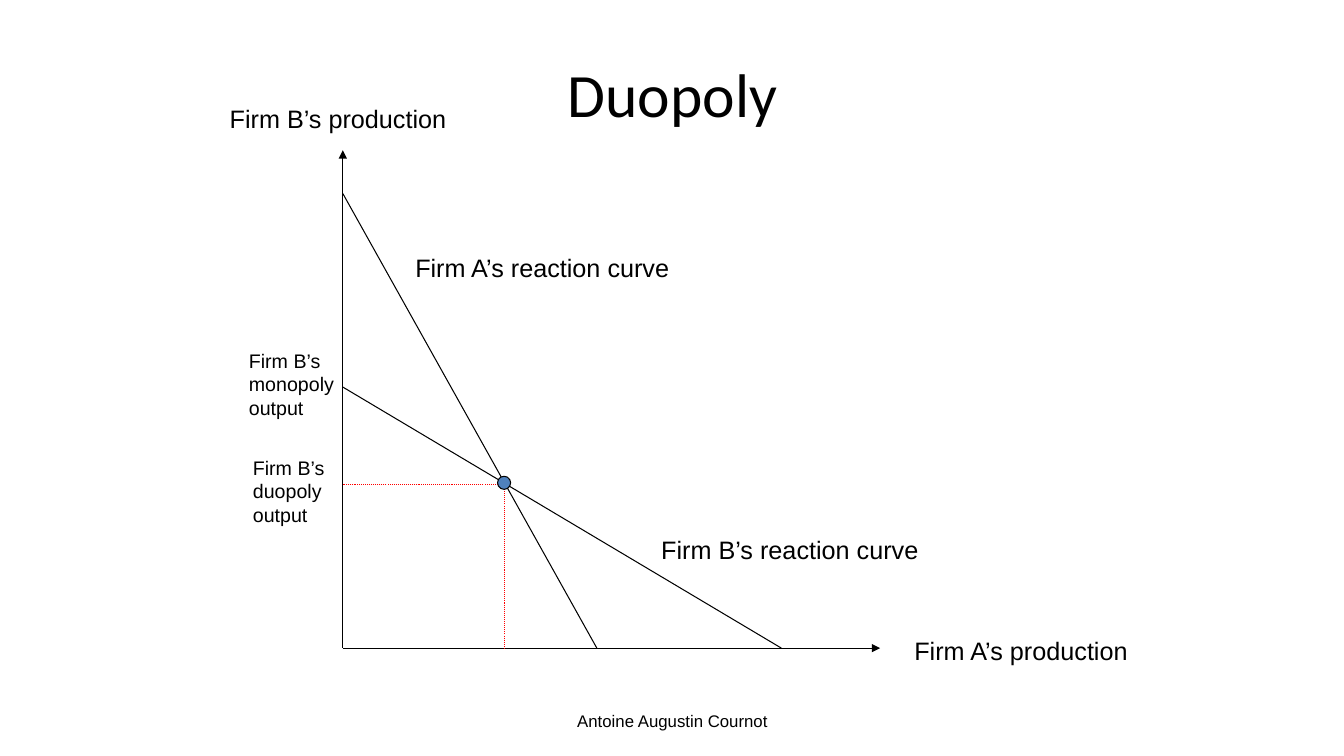
"""Build a slide showing the reaction curves of a Cournot duopoly."""
from dataclasses import dataclass

from lxml.etree import SubElement
from pptx import Presentation
from pptx.dml.color import RGBColor
from pptx.enum.dml import MSO_LINE_DASH_STYLE as Dash
from pptx.enum.shapes import MSO_CONNECTOR as Connector, MSO_SHAPE as Shape
from pptx.enum.text import MSO_ANCHOR as Anchor, PP_ALIGN as Align
from pptx.oxml.ns import qn
from pptx.slide import Slide
from pptx.util import Inches, Pt

BLACK = RGBColor(0x00, 0x00, 0x00)
RED = RGBColor(0xFF, 0x00, 0x00)
BLUE = RGBColor(0x4F, 0x81, 0xBD)
LINE_WIDTH = Pt(0.75)
ORIGIN_X, ORIGIN_Y = 3.4, 6.43
DUOPOLY_X, DUOPOLY_Y = 5.0, 4.79
MARKER_SIZE = 0.13


@dataclass(frozen=True)
class Label:
    text: str
    left: float
    top: float
    width: float
    height: float = 0.4
    size: int = 18
    font: str = "Arial"
    align: Align = Align.LEFT
    anchor: Anchor = Anchor.TOP


@dataclass(frozen=True)
class Segment:
    start: tuple[float, float]
    end: tuple[float, float]
    color: RGBColor = BLACK
    arrow: bool = False
    dotted: bool = False


SEGMENTS = [
    Segment((ORIGIN_X, ORIGIN_Y), (8.73, ORIGIN_Y), arrow=True),
    Segment((ORIGIN_X, ORIGIN_Y), (ORIGIN_X, 1.49), arrow=True),
    Segment((ORIGIN_X, 3.84), (7.75, ORIGIN_Y)),
    Segment((ORIGIN_X, 1.92), (5.92, ORIGIN_Y)),
    Segment((DUOPOLY_X, DUOPOLY_Y), (DUOPOLY_X, ORIGIN_Y), RED, dotted=True),
    Segment((DUOPOLY_X, 4.81), (ORIGIN_X, 4.81), RED, dotted=True),
]

LABELS = [
    Label("Duopoly", 0.67, 0.3, 12, 1.25, 44, "Calibri", Align.CENTER, Anchor.MIDDLE),
    Label("Antoine Augustin Cournot", 4.56, 6.95, 4.22, size=12,
          align=Align.CENTER, anchor=Anchor.MIDDLE),
    Label("Firm A’s production", 8.97, 6.25, 2.49),
    Label("Firm B’s production", 2.18, 0.98, 2.49),
    Label("Firm A’s reaction curve", 4.02, 2.45, 2.95),
    Label("Firm B’s reaction curve", 6.46, 5.25, 2.95),
    Label("Firm B’s monopoly output", 2.37, 3.41, 1.19, 0.81, 14),
    Label("Firm B’s duopoly output", 2.41, 4.47, 1.19, 0.81, 14),
]


def draw_segment(slide: Slide, segment: Segment) -> None:
    connector = slide.shapes.add_connector(
        Connector.STRAIGHT, *map(Inches, segment.start + segment.end))
    line = connector.line
    line.color.rgb = segment.color
    line.width = LINE_WIDTH
    if segment.dotted:
        line.dash_style = Dash.ROUND_DOT
    properties = connector._element.spPr
    if segment.arrow:
        SubElement(properties.find(qn("a:ln")), qn("a:tailEnd"), type="triangle")
    SubElement(properties, qn("a:effectLst"))


def draw_duopoly_point(slide: Slide) -> None:
    corner = (DUOPOLY_X - MARKER_SIZE / 2, DUOPOLY_Y - MARKER_SIZE / 2)
    point = slide.shapes.add_shape(
        Shape.OVAL, *map(Inches, corner + (MARKER_SIZE, MARKER_SIZE)))
    point.shadow.inherit = False
    point.fill.solid()
    point.fill.fore_color.rgb = BLUE
    point.line.color.rgb = BLACK
    point.line.width = LINE_WIDTH


def draw_label(slide: Slide, label: Label) -> None:
    frame = slide.shapes.add_textbox(
        *map(Inches, (label.left, label.top, label.width, label.height))).text_frame
    frame.word_wrap = True
    frame.vertical_anchor = label.anchor
    paragraph = frame.paragraphs[0]
    paragraph.text = label.text
    paragraph.alignment = label.align
    paragraph.font.name = label.font
    paragraph.font.size = Pt(label.size)
    paragraph.font.color.rgb = BLACK


def main() -> None:
    presentation = Presentation()
    presentation.slide_width = Inches(13.33)
    presentation.slide_height = Inches(7.5)
    slide = presentation.slides.add_slide(presentation.slide_layouts[6])
    for segment in SEGMENTS:
        draw_segment(slide, segment)
    draw_duopoly_point(slide)
    for label in LABELS:
        draw_label(slide, label)
    presentation.save("out.pptx")


if __name__ == "__main__":
    main()
